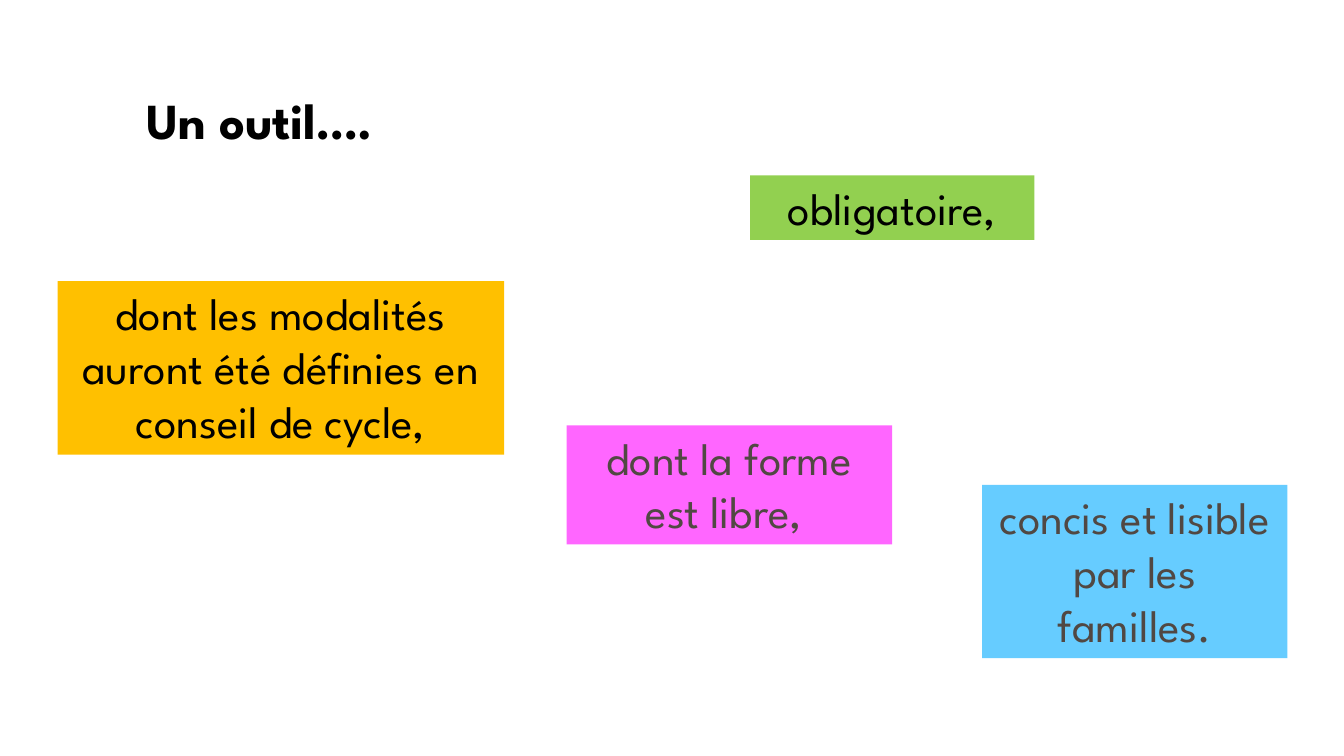
from pptx import Presentation
from pptx.dml.color import RGBColor
from pptx.enum.shapes import MSO_SHAPE
from pptx.enum.text import MSO_ANCHOR, MSO_AUTO_SIZE, PP_ALIGN
from pptx.util import Inches, Pt

WIDE, HIGH = Inches(13.33), Inches(7.5)
FONT = "League Spartan"
BLACK, BROWN = "000000", "514843"

# Boxes are left, top, width, height in percent of the slide
TITLE = ("Un outil….", (8.48, 11.07, 21.68, 9.47))
CARDS = [
    ("obligatoire,", (55.81, 23.2, 21.16, 8.53), "92D050", BLACK),
    ("dont la forme est libre, ", (42.16, 56.27, 24.23, 15.73), "FF66FF", BROWN),
    ("concis et lisible par les familles.", (73.07, 64.13, 22.73, 22.93),
     "66CCFF", BROWN),
    ("dont les modalités auront été définies en conseil de cycle,",
     (4.28, 37.2, 33.23, 22.93), "FFC000", BLACK),
]
FRAME = {
    "word_wrap": True,
    "auto_size": MSO_AUTO_SIZE.SHAPE_TO_FIT_TEXT,
    "vertical_anchor": MSO_ANCHOR.TOP,
    "margin_left": Inches(0.1),
    "margin_right": Inches(0.1),
    "margin_top": Inches(0.05),
    "margin_bottom": Inches(0.05),
}


def color(code):
    return RGBColor.from_string(code)


def apply(item, style):
    for name, value in style.items():
        setattr(item, name, value)


def place(box):
    """Turn percent shares into slide lengths."""
    return [int(share * side / 100)
            for share, side in zip(box, (WIDE, HIGH) * 2)]


def write(shape, text, size, tint, bold=False):
    frame = shape.text_frame
    frame.text = text
    apply(frame, FRAME)
    line = frame.paragraphs[0]
    apply(line, {"alignment": PP_ALIGN.CENTER, "line_spacing": 1.0})
    font = line.runs[0].font
    apply(font, {"name": FONT, "size": Pt(size), "bold": bold})
    font.color.rgb = color(tint)


# Heading in the title placeholder
def head(slide, text, box):
    title = slide.shapes.title
    apply(title, dict(zip(("left", "top", "width", "height"), place(box))))
    write(title, text, 36, BLACK, bold=True)


# Filled card with centred text
def card(slide, text, box, fill, tint):
    shape = slide.shapes.add_shape(MSO_SHAPE.RECTANGLE, *place(box))
    shape.shadow.inherit = False
    shape.fill.solid()
    shape.fill.fore_color.rgb = color(fill)
    shape.line.fill.background()
    write(shape, text, 32, tint)


def main():
    deck = Presentation()
    apply(deck, {"slide_width": WIDE, "slide_height": HIGH})
    slide = deck.slides.add_slide(deck.slide_layouts.get_by_name("Title Only"))
    head(slide, *TITLE)
    for item in CARDS:
        card(slide, *item)
    deck.save("out.pptx")


if __name__ == "__main__":
    main()
